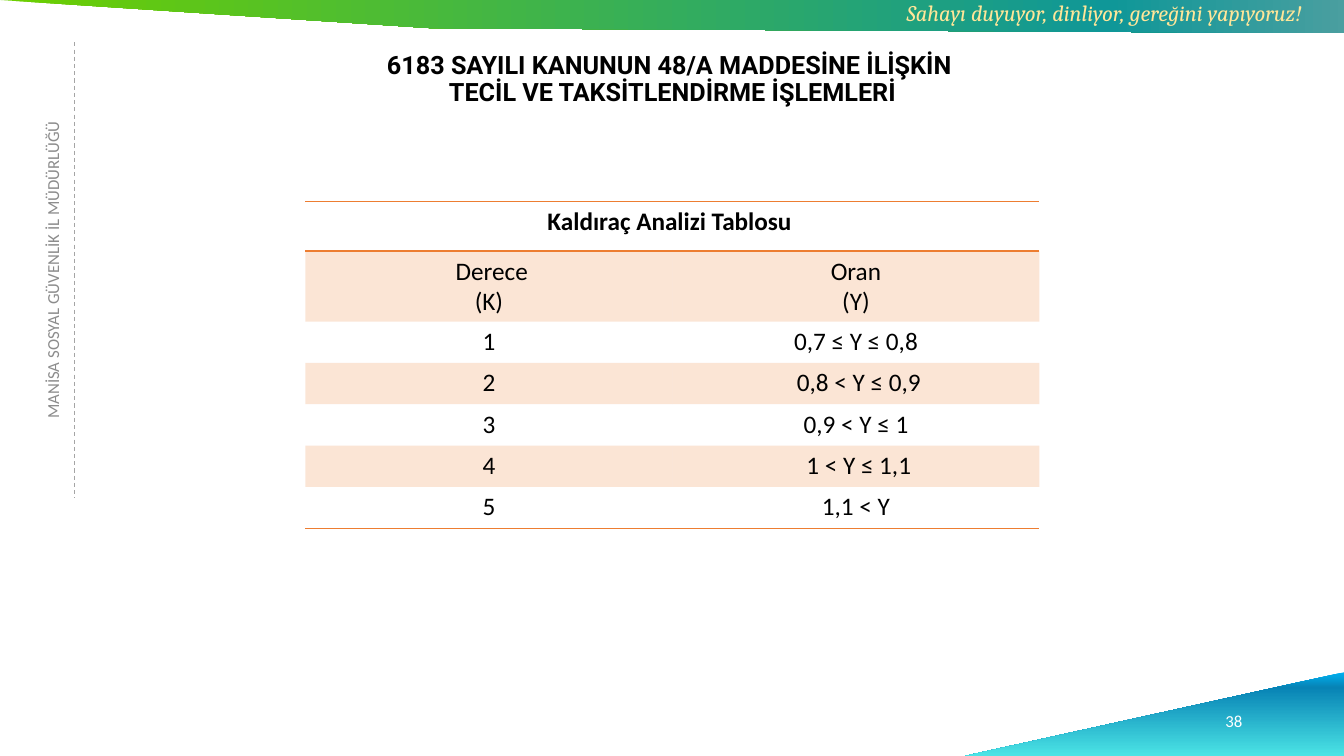
from dataclasses import dataclass

from lxml import etree
from pptx import Presentation
from pptx.dml.color import RGBColor
from pptx.enum import dml, shapes, text
from pptx.oxml import ns
from pptx.util import Inches, Pt


@dataclass(frozen=True)
class Theme:
    black: str = "000000"
    white: str = "FFFFFF"
    grey: str = "8C8C8C"
    rule: str = "A5A5A5"
    cream: str = "FFE699"
    orange: str = "ED7D31"
    band: tuple = ((0, "6DCF00"), (82, "0F9798"), (100, "4C9FA0"))
    corner: tuple = ((0, "00B0F0"), (18, "0783B5"), (100, "4BE4E5"))
    body_font: str = "Calibri"
    title_font: str = "Roboto"
    slogan_font: str = "Cambria"
    large: int = 18
    medium: int = 16
    small: int = 12


THEME = Theme()
NO_TABLE_STYLE = "{2D5ABB26-0587-4C30-8999-92F81FD0307C}"
TABLE_HEADING = "Kaldıraç Analizi Tablosu "
TABLE_ROWS = [
    ([" Derece", "(K)"], ["Oran", "(Y)"]),
    (["1"], ["0,7 ≤ Y ≤ 0,8"]),
    (["2"], [" 0,8 < Y ≤ 0,9"]),
    (["3"], ["0,9 < Y ≤ 1"]),
    (["4"], [" 1 < Y ≤ 1,1"]),
    (["5"], [" 1,1 < Y "]),
]
ROW_HEIGHTS = [0.49, 0.7] + [0.41] * 5


def inches(box):
    return [Inches(length) for length in box]


def add_element(parent, tag, **attributes):
    return etree.SubElement(parent, ns.qn(tag), attributes)


def add_span(para, words, size, color, font=THEME.body_font, bold=False, italic=False):
    span = para.add_run()
    span.text = words
    span.font.name = font
    span.font.size = Pt(size)
    span.font.bold = bold
    span.font.italic = italic
    span.font.color.rgb = RGBColor.from_string(color)
    return span


def fill_gradient(shape, stops, angle):
    """Fill with (percent, colour) stops; the angle runs anticlockwise."""
    shape.shadow.inherit = False
    shape.line.fill.background()
    shape.fill.gradient()
    shape.fill.gradient_angle = angle
    stop_list = shape._element.spPr.find(ns.qn("a:gradFill")).find(ns.qn("a:gsLst"))
    for old_stop in list(stop_list):
        stop_list.remove(old_stop)
    for percent, color in stops:
        stop = add_element(stop_list, "a:gs", pos=str(percent * 1000))
        add_element(stop, "a:srgbClr", val=color)


def add_label(page, box, words, size, color, align, rotation=0, **style):
    label = page.shapes.add_textbox(*inches(box))
    label.rotation = rotation
    frame = label.text_frame
    frame.word_wrap = True
    frame.vertical_anchor = text.MSO_ANCHOR.MIDDLE
    para = frame.paragraphs[0]
    para.alignment = align
    return add_span(para, words, size, color, **style)


def add_top_band(page, box):
    left, top, width, height = box
    points = [(width, height), (4.28, 0.28), (0, 0), (width, 0)]
    outline = page.shapes.build_freeform(
        Inches(left + width), Inches(top), scale=1.0)
    outline.add_line_segments(
        [(Inches(left + x), Inches(top + y)) for x, y in points], close=True)
    fill_gradient(outline.convert_to_shape(), THEME.band, 0)

    slogan = add_label(page, (left + 7.33, top - 0.06, 5.68, 0.37),
                       "Sahayı duyuyor, dinliyor, gereğini yapıyoruz!",
                       THEME.medium, THEME.cream, text.PP_ALIGN.RIGHT,
                       font=THEME.slogan_font, italic=True)
    effects = etree.Element(ns.qn("a:effectLst"))
    shadow = add_element(effects, "a:outerShdw", blurRad="38100", dist="38100",
                         dir="2700000", algn="tl")
    shade = add_element(shadow, "a:srgbClr", val=THEME.black)
    add_element(shade, "a:alpha", val="43000")
    slogan.font._element.find(ns.qn("a:latin")).addprevious(effects)


def add_side_strip(page, box):
    left, top, width, height = box
    edge = Inches(left + width)
    rule = page.shapes.add_connector(shapes.MSO_CONNECTOR.STRAIGHT,
                                     edge, Inches(top), edge, Inches(top + height))
    rule.line.color.rgb = RGBColor.from_string(THEME.rule)
    rule.line.width = Pt(0.75)
    rule.line.dash_style = dml.MSO_LINE.DASH
    add_element(rule._element.spPr, "a:effectLst")
    length, depth = 4.5, 0.4
    middle_x, middle_y = left + width - 0.22, top + height / 2
    add_label(page, (middle_x - length / 2, middle_y - depth / 2, length, depth),
              "MANİSA SOSYAL GÜVENLİK İL MÜDÜRLÜĞÜ",
              THEME.small, THEME.grey, text.PP_ALIGN.CENTER, rotation=270)


def add_corner(page, box):
    left, top, _, _ = box
    corner = page.shapes.add_shape(shapes.MSO_SHAPE.RIGHT_TRIANGLE, *inches(box))
    corner._element.spPr.find(ns.qn("a:xfrm")).set("flipH", "1")
    fill_gradient(corner, THEME.corner, 270)
    add_label(page, (left - 0.15, top + 0.28, 3, 0.4), "38",
              THEME.small, THEME.white, text.PP_ALIGN.RIGHT)


def set_title(page, box):
    title = page.shapes.title
    title.left, title.top, title.width, title.height = inches(box)
    frame = title.text_frame
    frame.auto_size = text.MSO_AUTO_SIZE.NONE
    frame.vertical_anchor = text.MSO_ANCHOR.MIDDLE
    para = frame.paragraphs[0]
    para.alignment = text.PP_ALIGN.CENTER
    para.line_spacing = 0.9
    style = (THEME.large, THEME.black, THEME.title_font, True)
    add_span(para, "6183 SAYILI KANUNUN 48/A MADDESİNE İLİŞKİN ", *style)
    para.add_line_break()
    add_span(para, "TECİL VE TAKSİTLENDİRME İŞLEMLERİ", *style)


def fill_cell(cell, lines, shaded=False, borders=(), bold=False):
    for index, words in enumerate(lines):
        frame = cell.text_frame
        para = frame.add_paragraph() if index else frame.paragraphs[0]
        para.alignment = text.PP_ALIGN.CENTER
        add_span(para, words, THEME.large, THEME.black, bold=bold)
    properties = cell._tc.get_or_add_tcPr()
    for side in borders:
        line = add_element(properties, side, w=str(Pt(1)))
        paint = add_element(line, "a:solidFill")
        add_element(paint, "a:srgbClr", val=THEME.orange)
    if shaded:
        cell.fill.solid()
        cell.fill.fore_color.rgb = RGBColor.from_string(THEME.orange)
        color = properties.find(ns.qn("a:solidFill"))[0]
        add_element(color, "a:alpha", val="20000")
    else:
        cell.fill.background()


def add_ratio_table(page, box):
    frame = page.shapes.add_table(len(ROW_HEIGHTS), 2, *inches(box))
    table = frame.table
    table.first_row = table.horz_banding = False
    table._tbl.tblPr.find(ns.qn("a:tableStyleId")).text = NO_TABLE_STYLE
    for row, height in zip(table.rows, ROW_HEIGHTS):
        row.height = Inches(height)
    heading, beside = table.cell(0, 0), table.cell(0, 1)
    heading.merge(beside)
    edges = ("a:lnT", "a:lnB")
    fill_cell(heading, [TABLE_HEADING], borders=edges, bold=True)
    fill_cell(beside, [], borders=edges)
    for row, cells in enumerate(TABLE_ROWS, start=1):
        borders = ("a:lnB",) if row == len(TABLE_ROWS) else ()
        for column, lines in enumerate(cells):
            fill_cell(table.cell(row, column), lines, row % 2 == 1, borders)


def main():
    deck = Presentation()
    deck.slide_width, deck.slide_height = Inches(13.33), Inches(7.5)
    page = deck.slides.add_slide(deck.slide_layouts.get_by_name("Title Only"))
    add_corner(page, (9.57, 6.67, 3.76, 0.83))
    add_side_strip(page, (0.3, 0.42, 0.44, 4.52))
    add_top_band(page, (0, 0, 13.43, 0.33))
    add_ratio_table(page, (3.03, 2, 7.28, sum(ROW_HEIGHTS)))
    set_title(page, (0.92, 0.4, 11.5, 0.78))
    deck.save("out.pptx")


if __name__ == "__main__":
    main()
